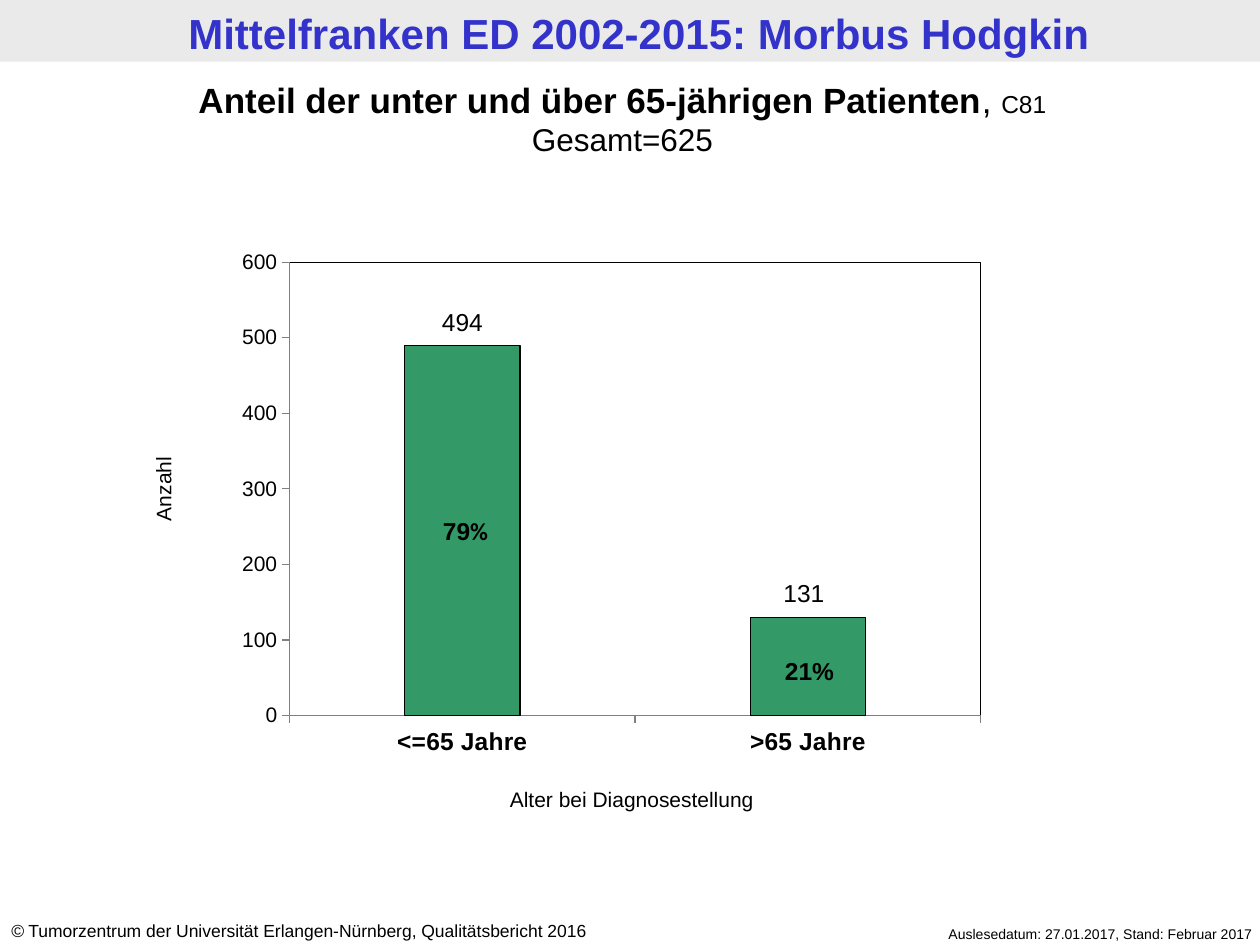
from dataclasses import dataclass

from lxml import etree
from pptx import Presentation
from pptx import util as u
from pptx.chart import data as chart_data
from pptx.dml.color import RGBColor
from pptx.enum import chart as charts, shapes, text
from pptx.oxml import ns, parse_xml

PX = 9144  # EMU per px, 100 px to the inch
COLORS = {"band": "EAEAEA", "title": "3333CC", "ink": "000000",
          "bar": "339966", "axis": "808080"}
LEFT, CENTER, RIGHT = text.PP_ALIGN.LEFT, text.PP_ALIGN.CENTER, text.PP_ALIGN.RIGHT


@dataclass
class Box:
    left: int
    top: int
    width: int
    height: int

    def emu(self) -> list[int]:
        return [n * PX for n in (self.left, self.top, self.width, self.height)]


@dataclass
class Run:
    wording: str
    size: int
    bold: bool = False
    italic: bool = False
    font: str = "Arial"


@dataclass
class AgeGroup:
    label: str
    bar_value: int  # count rounded to tens
    count: str
    share: list[Run]
    count_box: Box
    share_box: Box


AGE_GROUPS = [
    AgeGroup("<=65 Jahre", 490, "494",
             [Run("79", 14, bold=True), Run("%", 14, bold=True, font="Calibri")],
             Box(316, 239, 102, 34), Box(326, 405, 87, 34)),
    AgeGroup(">65 Jahre", 130, "131", [Run("21%", 14, bold=True)],
             Box(587, 454, 102, 34), Box(595, 516, 95, 34)),
]


def rgb(key: str) -> RGBColor:
    return RGBColor.from_string(COLORS[key])


def set_font(font, size: int, bold: bool = False, italic: bool = False,
             name: str = "Arial", color: str = "ink") -> None:
    font.size, font.bold, font.italic, font.name = u.Pt(size), bold, italic, name
    font.color.rgb = rgb(color)


def add_text(slide, box: Box, *lines: list[Run], align=CENTER,
             color: str = "ink", rotation: int = 0) -> None:
    label = slide.shapes.add_textbox(*box.emu())
    label.rotation = rotation
    frame = label.text_frame
    frame.word_wrap = True
    frame.auto_size = text.MSO_AUTO_SIZE.SHAPE_TO_FIT_TEXT
    for i, line in enumerate(lines):
        paragraph = frame.add_paragraph() if i else frame.paragraphs[0]
        paragraph.alignment = align
        for part in line:
            run = paragraph.add_run()
            run.text = part.wording
            set_font(run.font, part.size, part.bold, part.italic, part.font, color)


def frame_plot(chart) -> None:
    """Fix the inner plot area and give it a black outline."""
    plot_area = chart._chartSpace.chart.plotArea
    for old in plot_area.findall(ns.qn("c:layout")):
        plot_area.remove(old)
    layout = etree.Element(ns.qn("c:layout"))
    manual = etree.SubElement(layout, ns.qn("c:manualLayout"))
    settings = {"layoutTarget": "inner", "xMode": "edge", "yMode": "edge",
                "x": "0.113", "y": "0.142", "w": "0.786", "h": "0.772"}
    for tag, value in settings.items():
        etree.SubElement(manual, ns.qn(f"c:{tag}")).set("val", value)
    plot_area.insert(0, layout)
    plot_area.append(parse_xml(
        f'<c:spPr {ns.nsdecls("c", "a")}><a:noFill/><a:ln w="9525"><a:solidFill>'
        f'<a:srgbClr val="{COLORS["ink"]}"/></a:solidFill></a:ln></c:spPr>'))


def add_age_chart(slide, box: Box, groups: list[AgeGroup]) -> None:
    counts = chart_data.CategoryChartData()
    counts.categories = [group.label for group in groups]
    counts.add_series("Anzahl", [group.bar_value for group in groups])
    chart = slide.shapes.add_chart(
        charts.XL_CHART_TYPE.COLUMN_STACKED, *box.emu(), counts).chart
    chart.has_legend = chart.has_title = False
    set_font(chart.font, 18, name="Calibri")

    bars = chart.plots[0]
    bars.gap_width, bars.overlap, bars.vary_by_categories = 200, 100, False
    bar_format = bars.series[0].format
    bar_format.fill.solid()
    bar_format.fill.fore_color.rgb = rgb("bar")
    bar_format.line.color.rgb = rgb("ink")
    bar_format.line.width = u.Pt(0.75)

    ages, numbers = chart.category_axis, chart.value_axis
    for axis, size, bold in ((ages, 14, True), (numbers, 12, False)):
        axis.has_major_gridlines = False
        axis.major_tick_mark = charts.XL_TICK_MARK.OUTSIDE
        axis.minor_tick_mark = charts.XL_TICK_MARK.NONE
        axis.format.line.color.rgb = rgb("axis")
        axis.format.line.width = u.Pt(0.75)
        set_font(axis.tick_labels.font, size, bold)
    numbers.minimum_scale, numbers.maximum_scale, numbers.major_unit = 0, 600, 100
    frame_plot(chart)


def main() -> None:
    deck = Presentation()
    deck.slide_width, deck.slide_height = 1000 * PX, 750 * PX
    slide = deck.slides.add_slide(deck.slide_layouts[6])

    # Title band
    band = slide.shapes.add_shape(shapes.MSO_SHAPE.RECTANGLE, *Box(0, 0, 1000, 49).emu())
    band.shadow.inherit = False
    band.fill.solid()
    band.fill.fore_color.rgb = rgb("band")
    band.line.fill.background()
    add_text(slide, Box(7, 1, 1000, 49),
             [Run("Mittelfranken ED 2002-2015: Morbus Hodgkin", 24, bold=True)],
             color="title")

    # Footer
    add_text(slide, Box(-1, 725, 524, 27),
             [Run("©", 10, italic=True),
              Run(" Tumorzentrum der Universität Erlangen-Nürnberg, "
                  "Qualitätsbericht 2016", 10)], align=LEFT)
    add_text(slide, Box(665, 730, 339, 24),
             [Run("Auslesedatum: 27.01.2017, Stand: Februar 2017", 8)], align=RIGHT)

    # Chart with its heading and axis titles
    add_age_chart(slide, Box(151, 142, 698, 466), AGE_GROUPS)
    add_text(slide, Box(0, 57, 988, 74),
             [Run("Anteil der unter und über 65-jährigen Patienten", 20, bold=True),
              Run(", ", 20), Run("C81", 14)],
             [Run("Gesamt=625", 18)])
    add_text(slide, Box(335, 619, 333, 30), [Run("Alter bei Diagnosestellung", 12)])
    add_text(slide, Box(-1, 373, 261, 30), [Run("Anzahl", 12)], rotation=270)

    # Count above and share inside each bar
    for group in AGE_GROUPS:
        add_text(slide, group.share_box, group.share)
        add_text(slide, group.count_box, [Run(group.count, 14)])

    deck.save("out.pptx")


if __name__ == "__main__":
    main()
